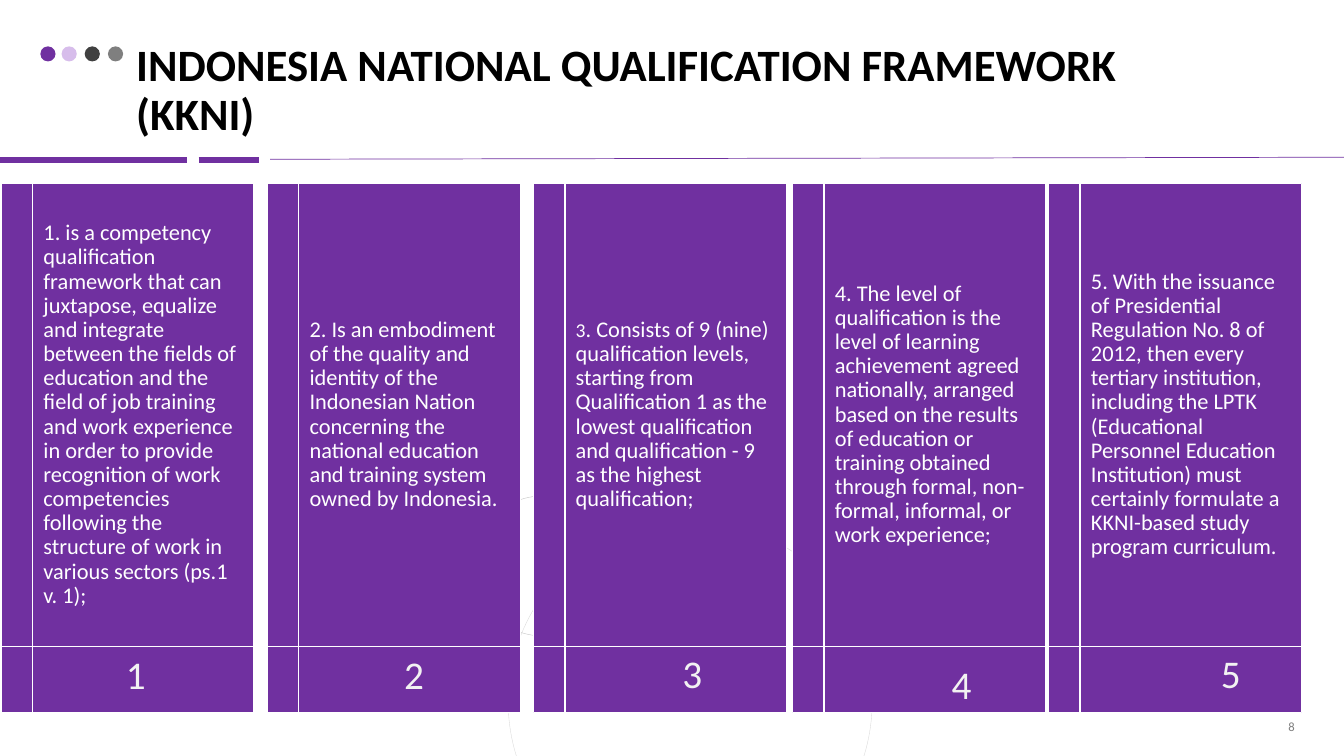
from pptx import Presentation
from pptx.dml.color import RGBColor
from pptx.enum.shapes import MSO_CONNECTOR, MSO_SHAPE
from pptx.enum.text import MSO_ANCHOR as ANCHOR, MSO_AUTO_SIZE as FIT, PP_ALIGN as ALIGN
from pptx.oxml.ns import qn
from pptx.util import Inches, Pt
from lxml.etree import SubElement

W, H = Inches(13.33), Inches(7.5)
FONT = "Calibri"
COLORS = {
    "purple": "7030A0", "lilac": "C7A2E3", "dark": "404040", "grey": "7F7F7F",
    "ring": "D9D9D9", "ring_small": "BFBFBF", "white": "FFFFFF",
    "number": "F2F2F2", "black": "000000",
}
CARD_TOP, CARD_W, CARD_H = 24.27, 18.83, 70
RULES = [(0, 21.2, 13.88, 21.2, 4.5), (14.78, 21.2, 19.28, 21.2, 4.5),
         (20.11, 21.07, 100, 20.8, 0.5)]
DOTS = [(3, "purple"), (4.58, "lilac"), (6.3, "dark"), (8.03, "grey")]
RINGS = [(37.81, 68.8, 27.08, 48.13, "ring"), (35.18, 65.6, 10.43, 18.53, "ring_small")]
CARDS = [
    (0.08, [(" is a competency qualification framework that can juxtapose, equalize and "
             "integrate between the fields of education and the field of job training and work "
             "experience in order to provide recognition of work competencies following the "
             "structure of work in various sectors (ps.1 v. 1);", 16)]),
    (19.88, [("2. Is an embodiment of the quality and identity of the Indonesian Nation "
              "concerning the national education and training system owned by Indonesia.", 16)]),
    (39.68, [("3", 14), (". Consists of 9 (nine) qualification levels, starting from "
                         "Qualification 1 as the lowest qualification and qualification - 9 "
                         "as the highest qualification;", 16)]),
    (58.96, [("4. The level of qualification is the level of learning achievement agreed "
              "nationally, arranged based on the results of education or training obtained "
              "through formal, non-formal, informal, or work experience;", 16)]),
    (78.02, [("5. With the issuance of Presidential Regulation No. 8 of 2012, then every "
              "tertiary institution, including the LPTK (Educational Personnel Education "
              "Institution) must certainly formulate a KKNI-based study program curriculum.",
              16)]),
]
NUMBERS = [(8.63, 85.33), (29.33, 85.33), (50.04, 85.2), (70.07, 86.67), (90.1, 85.2)]


def rgb(name):
    """Return the named colour."""
    return RGBColor.from_string(COLORS[name])


def box(x, y, w, h):
    """Turn percentages of the slide into lengths."""
    return int(W * x / 100), int(H * y / 100), int(W * w / 100), int(H * h / 100)


def add_run(p, text, size, color, bold=False):
    """Append one formatted run to a paragraph."""
    r = p.add_run()
    r.text = text
    r.font.name, r.font.size, r.font.bold = FONT, Pt(size), bold
    r.font.color.rgb = rgb(color)


def add_text(shapes, area, runs, color, anchor=ANCHOR.TOP, wrap=True):
    """Add a text box with one paragraph and return it with the paragraph."""
    sp = shapes.add_textbox(*area)
    tf = sp.text_frame
    tf.word_wrap, tf.vertical_anchor = wrap, anchor
    for text, size in runs:
        add_run(tf.paragraphs[0], text, size, color)
    return tf, tf.paragraphs[0]


def add_rule(shapes, x1, y1, x2, y2, width):
    """Add a purple line under the title."""
    left, top, right, bottom = box(x1, y1, x2, y2)
    sp = shapes.add_connector(MSO_CONNECTOR.STRAIGHT, left, top, right, bottom)
    sp.line.color.rgb, sp.line.width = rgb("purple"), Pt(width)
    SubElement(sp._element.spPr, qn("a:effectLst"))


def add_shape(shapes, kind, area, fill=None, line=None, width=1):
    """Add a preset shape with an optional fill and outline."""
    sp = shapes.add_shape(kind, *area)
    sp.shadow.inherit = False
    if fill:
        sp.fill.solid()
        sp.fill.fore_color.rgb = rgb(fill)
    else:
        sp.fill.background()
    if line:
        sp.line.color.rgb, sp.line.width = rgb(line), Pt(width)
    else:
        sp.line.fill.background()
    return sp


def add_dot(shapes, x, color):
    """Add one of the small dots beside the title."""
    sp = add_shape(shapes, MSO_SHAPE.OVAL, box(x, 6.13, 1.13, 2), color)
    if color == "lilac":
        clr = sp._element.spPr.find(qn("a:solidFill")).find(qn("a:srgbClr"))
        SubElement(clr, qn("a:alpha")).set("val", "70000")


def add_card(shapes, x, runs, numbered):
    """Add a card turned on its side with upright text."""
    left, top, w, h = box(x, CARD_TOP, CARD_W, CARD_H)
    area = left + (w - h) // 2, top + (h - w) // 2, h, w
    sp = add_shape(shapes, MSO_SHAPE.FLOWCHART_INTERNAL_STORAGE, area, "purple", "white")
    sp.rotation = 270
    tf, p = add_text(shapes, box(x + 2.33, CARD_TOP, 16.5, 61.2), runs, "white", ANCHOR.MIDDLE)
    tf.margin_left = tf.margin_right = Inches(0.11)
    tf.margin_top = tf.margin_bottom = 0
    p.line_spacing = 0.9
    if numbered:
        pPr = p._p.get_or_add_pPr()
        pPr.set("marL", "0")
        pPr.set("indent", "0")
        SubElement(pPr, qn("a:buFont")).set("typeface", FONT)
        SubElement(pPr, qn("a:buAutoNum")).set("type", "arabicPeriod")


def set_title(sp):
    """Place and format the title placeholder."""
    sp.left, sp.top, sp.width, sp.height = box(10.13, 4.8, 79.97, 13.73)
    tf = sp.text_frame
    tf.word_wrap, tf.auto_size, tf.vertical_anchor = True, FIT.NONE, ANCHOR.BOTTOM
    tf.margin_left = tf.margin_right = tf.margin_top = tf.margin_bottom = 0
    p = tf.paragraphs[0]
    p.alignment, p.line_spacing = ALIGN.LEFT, 0.9
    add_run(p, "INDONESIA NATIONAL QUALIFICATION FRAMEWORK ", 32, "black", True)
    p.add_line_break()
    add_run(p, "(KKNI)", 32, "black", True)


def main():
    """Build the slide and save it."""
    prs = Presentation()
    prs.slide_width, prs.slide_height = W, H
    s = prs.slides.add_slide(prs.slide_layouts[5])
    set_title(s.shapes.title)
    for rule in RULES:
        add_rule(s.shapes, *rule)
    dots = s.shapes.add_group_shape()
    for x, color in DOTS:
        add_dot(dots.shapes, x, color)
    for *area, color in RINGS:
        add_shape(s.shapes, MSO_SHAPE.OVAL, box(*area), line=color, width=0.25)
    _, p = add_text(s.shapes, box(74.57, 94.27, 22.5, 3.6), [("8", 9)], "grey", ANCHOR.MIDDLE)
    p.alignment = ALIGN.RIGHT
    cards = s.shapes.add_group_shape()
    for i, (x, runs) in enumerate(CARDS):
        add_card(cards.shapes, x, runs, numbered=i == 0)
    for i, (x, y) in enumerate(NUMBERS, 1):
        tf, _ = add_text(s.shapes, box(x, y, 3, 7.6), [(str(i), 28)], "number", wrap=False)
        tf.auto_size = FIT.SHAPE_TO_FIT_TEXT
    prs.save("out.pptx")


if __name__ == "__main__":
    main()
